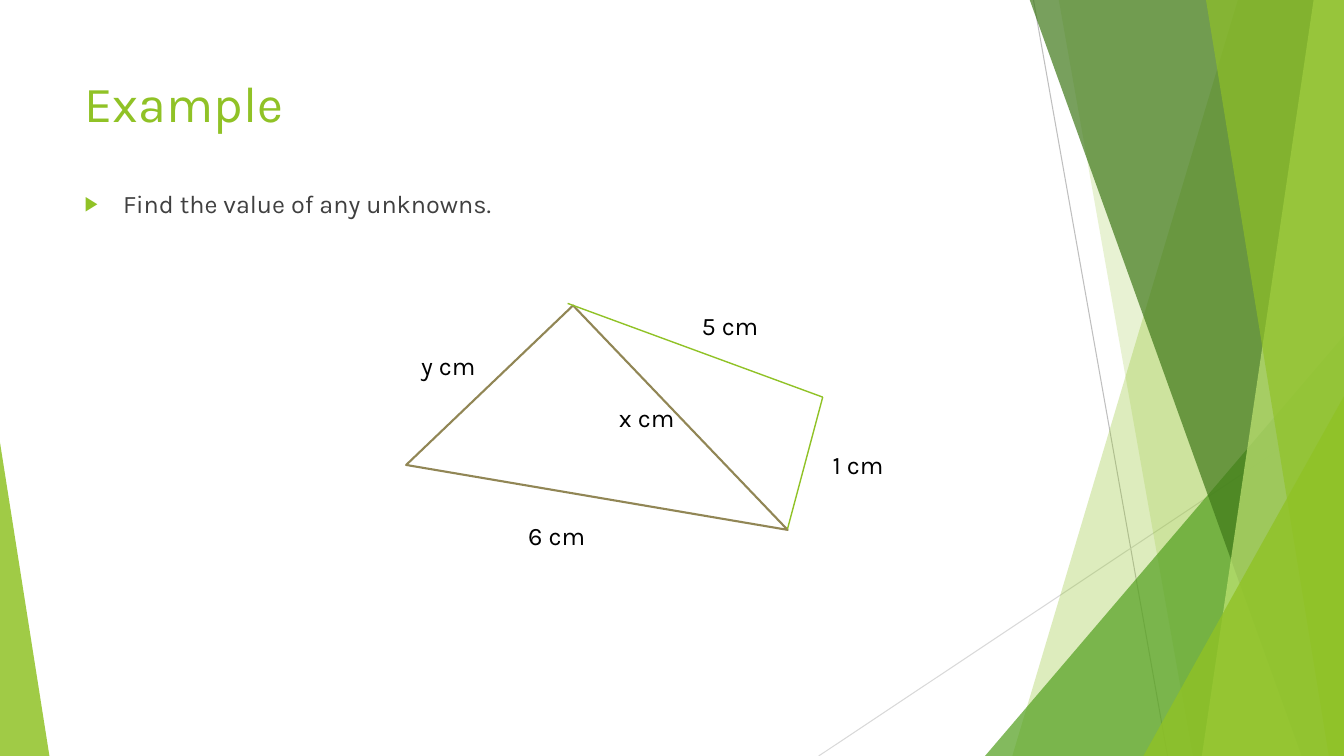
from lxml import etree
from pptx import Presentation
from pptx.dml.color import RGBColor
from pptx.enum.shapes import MSO_CONNECTOR, MSO_SHAPE
from pptx.enum.text import MSO_ANCHOR, MSO_AUTO_SIZE, PP_ALIGN
from pptx.oxml.ns import qn
from pptx.util import Pt

PX = 9144  # 100 px to the inch
WIDE, HIGH = 1333, 750
LINE = MSO_CONNECTOR.STRAIGHT
TRI, RIGHT_TRI = MSO_SHAPE.ISOSCELES_TRIANGLE, MSO_SHAPE.RIGHT_TRIANGLE
TOP, LEFT = MSO_ANCHOR.TOP, PP_ALIGN.LEFT
GROW = MSO_AUTO_SIZE.SHAPE_TO_FIT_TEXT
GREEN = "90C226"


def paint(part, color, alpha=100):
    """Give a fill a solid colour, with alpha in percent."""
    part.solid()
    part.fore_color.rgb = RGBColor.from_string(color)
    if alpha < 100:
        tone = part._xPr.find(".//" + qn("a:srgbClr"))
        etree.SubElement(tone, qn("a:alpha"), val=str(alpha * 1000))


def style(para, size, color):
    para.alignment = LEFT
    para.font.size = Pt(size)
    para.font.name = "Karla"
    paint(para.font.fill, color)


deck = Presentation()
deck.slide_width, deck.slide_height = WIDE * PX, HIGH * PX
slide = deck.slides.add_slide(deck.slide_layouts[1])
shapes = slide.shapes

# Title and list
title, body = shapes.title, slide.placeholders[1]
for holder, top, high, text, size, color in (
    (title, 67, 144, "Example", 36, GREEN),
    (body, 182, 424, "Find the value of any unknowns.", 18, "404040"),
):
    holder.left, holder.top = 74 * PX, top * PX
    holder.width, holder.height = 940 * PX, high * PX
    frame = holder.text_frame
    frame.text = text
    frame.vertical_anchor = TOP
    style(frame.paragraphs[0], size, color)

item = body.text_frame.paragraphs[0]
item.space_before = Pt(10)
props = item._p.get_or_add_pPr()
props.set("marL", str(38 * PX))
props.set("indent", str(-38 * PX))
font = props.find(qn("a:defRPr"))
tint = etree.Element(qn("a:buClr"))
etree.SubElement(tint, qn("a:srgbClr"), val=GREEN)
font.addprevious(tint)
font.addprevious(etree.Element(qn("a:buSzPct"), val="80000"))
font.addprevious(etree.Element(qn("a:buChar"), char="▶"))

# Green facets: bands lean from the top edge to the bottom edge,
# triangles stand on the bottom edge with the peak at one side
bands = [
    (1228, 1004, GREEN, 30),
    (1050, 1183, GREEN, 20),
    (977, 333, 356, 1, "54A021", 72),
    (1021, 1291, "3F7819", 70),
    (1303, 1192, "C0E474", 70),
    (1196, 1318, GREEN, 65),
    (1134, 393, 199, 1, GREEN, 80),
    (0, 439, 49, 0, GREEN, 85),
]
lines = [
    (1025, 0, 1158, 750, "BFBFBF", 0.75),
    (1333, 403, 812, 750, "D9D9D9", 0.75),
]
sides = [
    (781, 525, 816, 394, GREEN, 1),
    (816, 394, 563, 301, GREEN, 1),
]
for x1, y1, x2, y2, color, width in lines + sides:
    line = shapes.add_connector(LINE, x1 * PX, y1 * PX, x2 * PX, y2 * PX)
    paint(line.line.fill, color)
    line.line.width = Pt(width)
    etree.SubElement(line._element.spPr, qn("a:effectLst"))

for *place, color, alpha in bands:
    if len(place) == 2:
        head, foot = place
        pen = shapes.build_freeform(head, -1, PX)
        pen.add_line_segments([(WIDE, -1), (WIDE, HIGH), (foot, HIGH)])
        facet = pen.convert_to_shape()
    else:
        left, top, wide, peak = place
        facet = shapes.add_shape(
            TRI, left * PX, top * PX, wide * PX, (HIGH - top) * PX)
        facet.adjustments[0] = peak
    paint(facet.fill, color, alpha)
    facet.line.fill.background()
    facet.shadow.inherit = False

# Right triangle that shares its long side with the green one
base = shapes.add_shape(RIGHT_TRI, 438 * PX, 379 * PX, 308 * PX, 229 * PX)
base._element.spPr.find(qn("a:xfrm")).set("flipH", "1")
base.rotation = 226.3
paint(base.fill, "FFFFFF")
paint(base.line.fill, "918655")
base.line.width = Pt(1.5)
base.shadow.inherit = False
# Green sides lie over the triangle
for side in list(shapes)[4:6]:
    base._element.addnext(side._element)

# Lengths
for text, left, top, wide in (
    ("1 cm", 816, 441, 76),
    ("x cm", 604, 394, 82),
    ("5 cm", 686, 303, 95),
    ("y cm", 408, 343, 84),
    ("6 cm", 514, 511, 122),
):
    box = shapes.add_textbox(left * PX, top * PX, wide * PX, 40 * PX)
    frame = box.text_frame
    frame.word_wrap = True
    frame.auto_size = GROW
    frame.text = text
    style(frame.paragraphs[0], 18, "000000")

deck.save("out.pptx")
